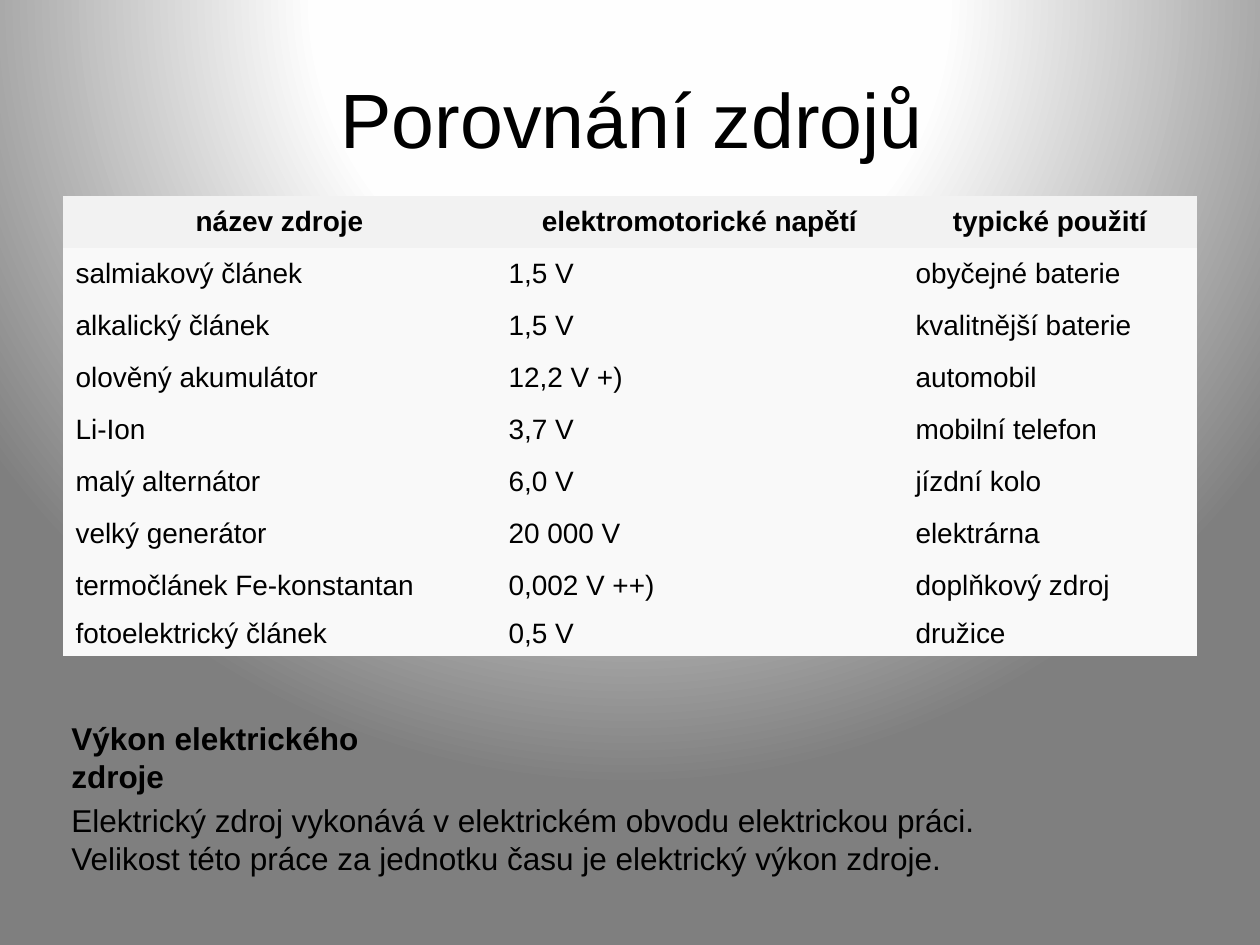
from pptx import Presentation
from pptx import util as u
from pptx.dml.color import RGBColor
from pptx.enum import text
from pptx.oxml import parse_xml
from pptx.oxml.ns import nsdecls, qn

# Content
TITLE = "Porovnání zdrojů"
SOURCES = [
    ("název zdroje", "elektromotorické napětí", "typické použití"),
    ("salmiakový článek", "1,5 V", "obyčejné baterie"),
    ("alkalický článek", "1,5 V", "kvalitnější baterie"),
    ("olověný akumulátor", "12,2 V +)", "automobil"),
    ("Li-Ion", "3,7 V", "mobilní telefon"),
    ("malý alternátor", "6,0 V", "jízdní kolo"),
    ("velký generátor", "20 000 V", "elektrárna"),
    ("termočlánek Fe-konstantan", "0,002 V ++)", "doplňkový zdroj"),
    ("fotoelektrický článek", "0,5 V", "družice"),
]
POWER_HEADING = ["Výkon elektrického zdroje"]
POWER_TEXT = [
    "Elektrický zdroj vykonává v elektrickém obvodu elektrickou práci.",
    "Velikost této práce za jednotku času je elektrický výkon zdroje.",
]

# Theme and layout, lengths in px
THEME = dict(
    font="Arial", ink="000000", header="F2F2F2", body="F9F9F9",
    title_pt=44, table_pt=16, text_pt=18,
    glow=[(0, "FFFFFF"), (40, "FEFEFE"), (100, "7F7F7F")],
)
PX = u.Inches(1) / 126
COLUMNS = [433, 407, 294]
ROW, LAST_ROW = 52, 26
HANGING = 47
NO_STYLE = "{2D5ABB26-0587-4C30-8999-92F81FD0307C}"


def px(n):
    return u.Emu(round(n * PX))


def write(tf, lines, size, bold=False, align=text.PP_ALIGN.LEFT, hanging=0):
    for i, line in enumerate(lines):
        p = tf.add_paragraph() if i else tf.paragraphs[0]
        p.alignment = align
        if hanging:
            pPr = p._p.get_or_add_pPr()
            pPr.set("marL", str(px(hanging)))
            pPr.set("indent", str(-px(hanging)))
        r = p.add_run()
        r.text = line
        r.font.name = THEME["font"]
        r.font.size = u.Pt(size)
        r.font.bold = bold
        r.font.color.rgb = RGBColor.from_string(THEME["ink"])


def add_text(s, box, lines, wrap=True, **fmt):
    tf = s.shapes.add_textbox(*map(px, box)).text_frame
    tf.word_wrap = wrap
    tf.auto_size = text.MSO_AUTO_SIZE.SHAPE_TO_FIT_TEXT
    write(tf, lines, THEME["text_pt"], **fmt)


def set_background(s):
    stops = "".join(f'<a:gs pos="{pos * 1000}"><a:srgbClr val="{color}"/></a:gs>'
                    for pos, color in THEME["glow"])
    s.element.find(qn("p:cSld")).insert(0, parse_xml(
        f'<p:bg {nsdecls("p", "a")}><p:bgPr><a:gradFill rotWithShape="1">'
        f'<a:gsLst>{stops}</a:gsLst><a:path path="circle">'
        '<a:fillToRect l="50000" t="-80000" r="50000" b="180000"/></a:path>'
        '</a:gradFill><a:effectLst/></p:bgPr></p:bg>'))


def add_sources(s, left, top):
    heights = [ROW] * (len(SOURCES) - 1) + [LAST_ROW]
    frame = s.shapes.add_table(len(SOURCES), len(COLUMNS), px(left), px(top),
                               px(sum(COLUMNS)), px(sum(heights)))
    table = frame.table
    table.horz_banding = False
    table._tbl.tblPr.find(qn("a:tableStyleId")).text = NO_STYLE
    for column, width in zip(table.columns, COLUMNS):
        column.width = px(width)
    for i, (row, values) in enumerate(zip(table.rows, SOURCES)):
        row.height = px(heights[i])
        header = i == 0
        for cell, value in zip(row.cells, values):
            cell.fill.solid()
            cell.fill.fore_color.rgb = RGBColor.from_string(
                THEME["header" if header else "body"])
            cell.vertical_anchor = text.MSO_ANCHOR.MIDDLE
            align = text.PP_ALIGN.CENTER if header else text.PP_ALIGN.LEFT
            write(cell.text_frame, [value], THEME["table_pt"], bold=header,
                  align=align, hanging=HANGING)


def main():
    prs = Presentation()
    prs.slide_width, prs.slide_height = px(1260), px(945)
    s = prs.slides.add_slide(prs.slide_layouts[5])
    set_background(s)

    # Title
    title = s.shapes.title
    title.left, title.top, title.width, title.height = map(px, (65, 39, 1134, 158))
    title.text_frame.vertical_anchor = text.MSO_ANCHOR.MIDDLE
    write(title.text_frame, [TITLE], THEME["title_pt"], align=text.PP_ALIGN.CENTER)

    # Comparison table
    add_sources(s, 63, 196)

    # Power of a source
    add_text(s, (59, 713, 413, 50), POWER_HEADING, wrap=False, bold=True)
    add_text(s, (59, 795, 1129, 88), POWER_TEXT)

    prs.save("out.pptx")


if __name__ == "__main__":
    main()
